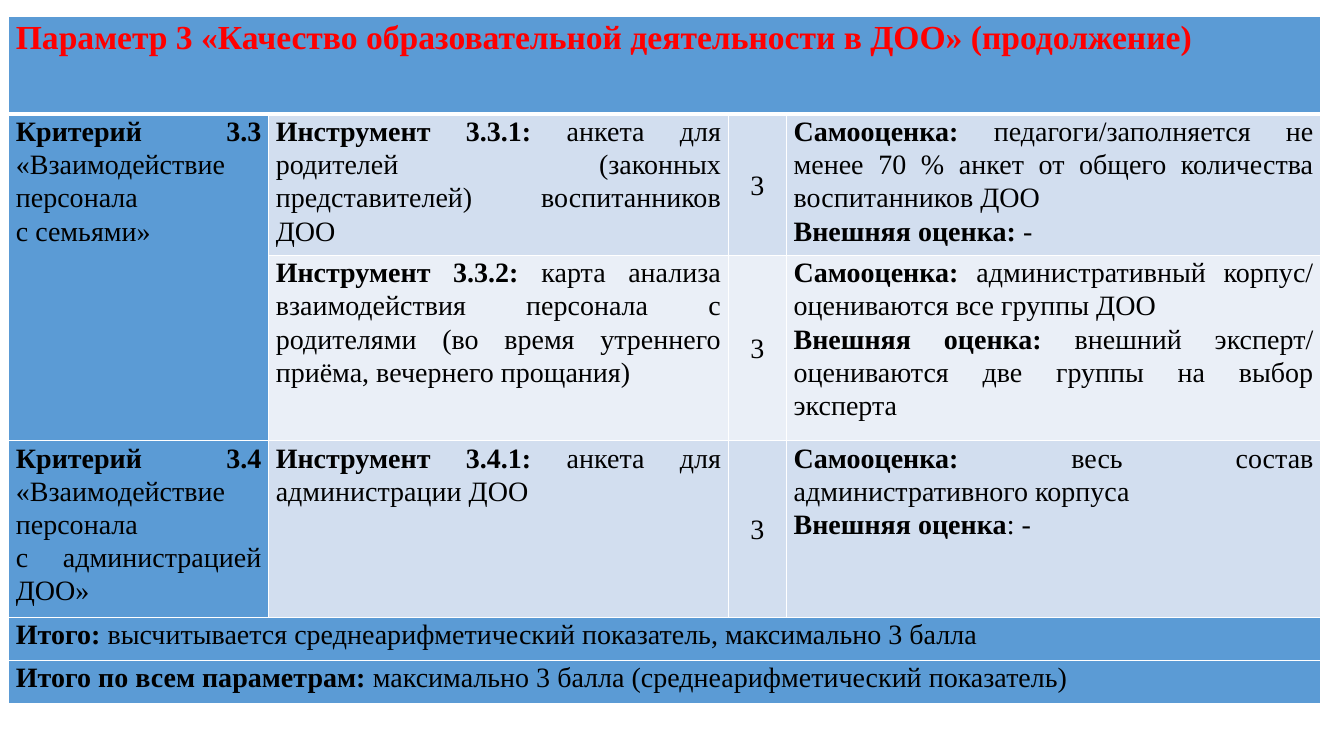
from dataclasses import dataclass

from lxml import etree
from pptx import Presentation
from pptx.dml.color import RGBColor
from pptx.enum.text import MSO_ANCHOR, PP_ALIGN
from pptx.oxml.ns import qn
from pptx.util import Cm, Pt

JUSTIFY, CENTER = PP_ALIGN.JUSTIFY, PP_ALIGN.CENTER
TOP, MIDDLE = MSO_ANCHOR.TOP, MSO_ANCHOR.MIDDLE


@dataclass(frozen=True)
class Theme:
    """Colours, font and type sizes of the slide."""
    font: str = "Times New Roman"
    title_size: int = 24
    body_size: int = 20
    title: str = "FF0000"
    text: str = "000000"
    accent: str = "5B9BD5"
    band: str = "D2DEEF"
    light_band: str = "EAEFF7"
    border: str = "FFFFFF"
    line_spacing: float = 1.07


THEME = Theme()
COLUMN_WIDTHS = (6.55, 11.58, 1.47, 13.46)
ROW_HEIGHTS = (2.46, 3.56, 4.67, 4.45, 1.09, 1.09)
SCORE_COLUMN = 2
TITLE_ROW = 0
FULL_WIDTH_ROWS = (0, 4, 5)
ROW_FILLS = (THEME.accent, THEME.band, THEME.light_band, THEME.band, THEME.accent, THEME.accent)
ROWS = (
    ("**Параметр 3 «Качество образовательной деятельности в ДОО» (продолжение)**",),
    ("**Критерий 3.3 **«Взаимодействие персонала \nс семьями»",
     "**Инструмент 3.3.1: **анкета для родителей (законных представителей) воспитанников ДОО ",
     "3",
     "**Самооценка: **педагоги/заполняется не менее 70 % анкет от общего количества "
     "воспитанников ДОО\n**Внешняя оценка:** -"),
    ("",
     "**Инструмент 3.3.2:** карта анализа взаимодействия персонала с родителями "
     "(во время утреннего приёма, вечернего прощания)",
     "3",
     "**Самооценка: **административный корпус/ оцениваются все группы ДОО\n"
     "**Внешняя оценка:** внешний эксперт/ оцениваются две группы на выбор эксперта"),
    ("**Критерий 3.4 **«Взаимодействие персонала \nс администрацией ДОО»",
     "**Инструмент 3.4.1:** анкета для администрации ДОО ",
     "3",
     "**Самооценка: **весь состав административного корпуса \n**Внешняя оценка**: -"),
    ("**Итого: **высчитывается среднеарифметический показатель, максимально 3 балла",),
    ("**Итого по всем параметрам: **максимально 3 балла (среднеарифметический показатель)",),
)


class SlideBuilder:
    """Draws styled elements on the current slide."""

    def __init__(self, slide, theme):
        self.slide = slide
        self.theme = theme

    def add_table(self, left, top, column_widths, row_heights):
        """Add an empty table with the given sizes in centimetres."""
        frame = self.slide.shapes.add_table(
            len(row_heights), len(column_widths), Cm(left), Cm(top),
            Cm(sum(column_widths)), Cm(sum(row_heights)))
        table = frame.table
        for column, width in zip(table.columns, column_widths):
            column.width = Cm(width)
        for row, height in zip(table.rows, row_heights):
            row.height = Cm(height)
        return table

    def style_cell(self, cell, fill, bottom_width=1):
        """Fill a cell and outline its four sides."""
        cell.fill.solid()
        cell.fill.fore_color.rgb = RGBColor.from_string(fill)
        properties = cell._tc.get_or_add_tcPr()
        for index, side in enumerate(("lnL", "lnR", "lnT", "lnB")):
            width = bottom_width if side == "lnB" else 1
            line = etree.Element(qn(f"a:{side}"), w=str(Pt(width)))
            solid = etree.SubElement(line, qn("a:solidFill"))
            etree.SubElement(solid, qn("a:srgbClr"), val=self.theme.border)
            properties.insert(index, line)

    def write_cell(self, cell, text, size, color, alignment=JUSTIFY, anchor=TOP):
        """Write lines of text, with bold parts between double asterisks."""
        cell.margin_left = cell.margin_right = Cm(0.18)
        cell.margin_top = cell.margin_bottom = Cm(0)
        cell.vertical_anchor = anchor
        cell.text_frame.text = text.replace("**", "")
        for paragraph, line in zip(cell.text_frame.paragraphs, text.split("\n")):
            paragraph.alignment = alignment
            paragraph.line_spacing = self.theme.line_spacing
            paragraph.text = ""
            for index, part in enumerate(line.split("**")):
                if part:
                    run = paragraph.add_run()
                    run.text = part
                    run.font.name = self.theme.font
                    run.font.size = Pt(size)
                    run.font.bold = index % 2 == 1
                    run.font.color.rgb = RGBColor.from_string(color)


def main():
    """Build the criteria table and save the presentation."""
    presentation = Presentation()
    presentation.slide_width, presentation.slide_height = Cm(33.87), Cm(19.05)
    slide = presentation.slides.add_slide(presentation.slide_layouts[6])
    builder = SlideBuilder(slide, THEME)
    table = builder.add_table(0.22, 0.42, COLUMN_WIDTHS, ROW_HEIGHTS)
    last_column = len(COLUMN_WIDTHS) - 1
    for row in FULL_WIDTH_ROWS:
        table.cell(row, 0).merge(table.cell(row, last_column))
    table.cell(1, 0).merge(table.cell(2, 0))

    for row, (texts, row_fill) in enumerate(zip(ROWS, ROW_FILLS)):
        is_title = row == TITLE_ROW
        for column in range(len(COLUMN_WIDTHS)):
            fill = THEME.accent if column == 0 else row_fill
            builder.style_cell(table.cell(row, column), fill, 3 if is_title else 1)
        size = THEME.title_size if is_title else THEME.body_size
        color = THEME.title if is_title else THEME.text
        for column, text in enumerate(texts):
            cell = table.cell(row, column)
            if cell.is_spanned:
                continue
            is_score = column == SCORE_COLUMN
            builder.write_cell(cell, text, size, color,
                               CENTER if is_score else JUSTIFY, MIDDLE if is_score else TOP)
    presentation.save("out.pptx")


if __name__ == "__main__":
    main()
